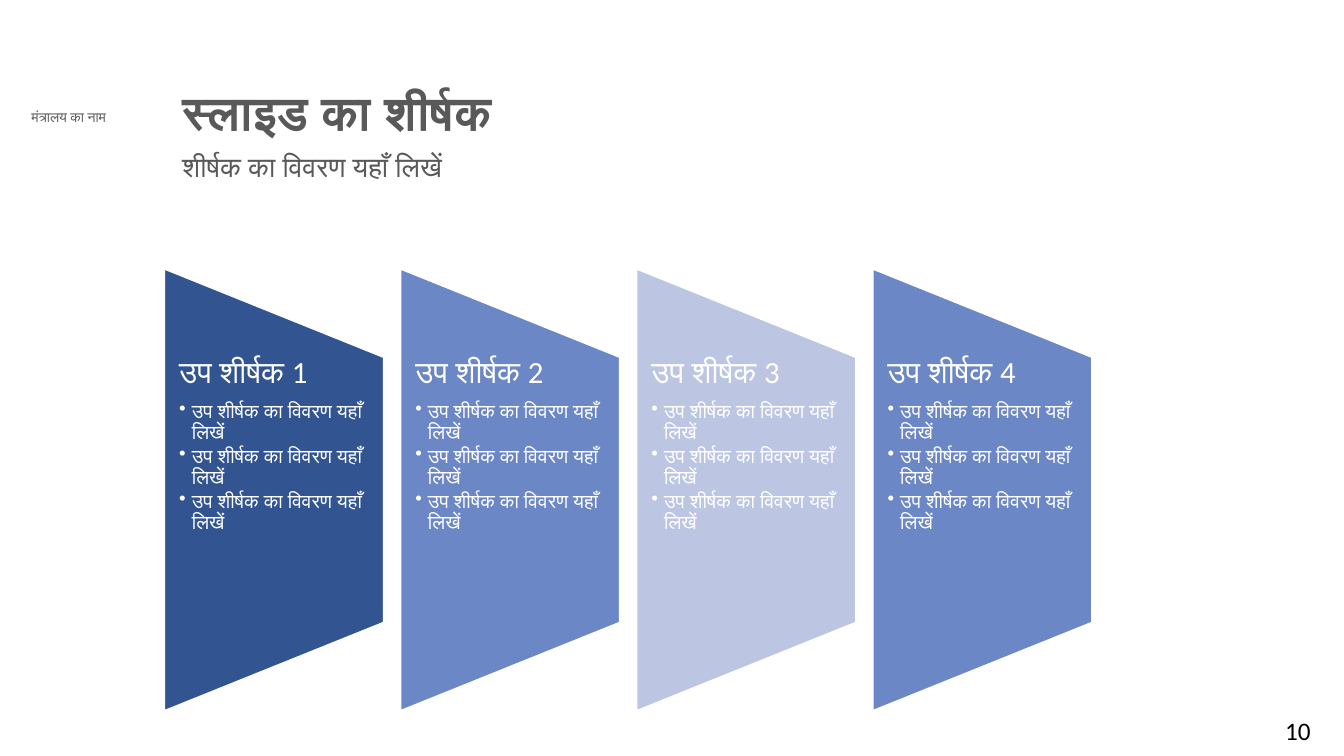
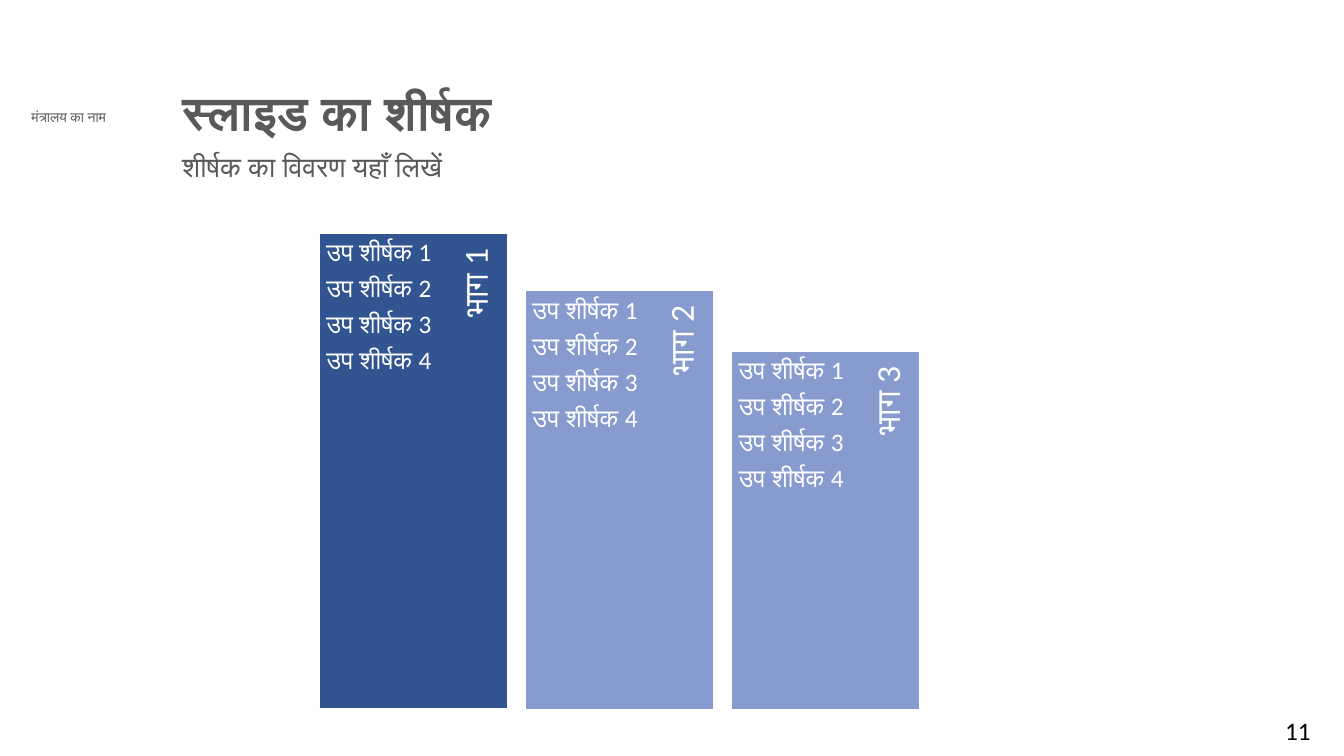
from dataclasses import dataclass

from lxml.etree import SubElement
from pptx import Presentation
from pptx.dml.color import RGBColor
from pptx.enum.shapes import MSO_SHAPE
from pptx.enum.text import MSO_ANCHOR, MSO_AUTO_SIZE, PP_ALIGN
from pptx.oxml.ns import qn
from pptx.util import Pt

WHITE = RGBColor(0xFF, 0xFF, 0xFF)
BLACK = RGBColor(0x00, 0x00, 0x00)
GREY = RGBColor(0x59, 0x59, 0x59)
NAVY = RGBColor(0x32, 0x54, 0x91)
BLUE = RGBColor(0x6C, 0x87, 0xC5)
SOFT_BLUE = RGBColor(0x87, 0x9B, 0xCE)
PALE_BLUE = RGBColor(0xBC, 0xC6, 0xE2)

BODY_FONT = "Calibri"
MINISTRY_FONT = "Lato"
TITLE_ONLY = 5
BULLET_INDENT = 9


@dataclass
class Box:
    """A rectangle in points."""

    left: float
    top: float
    width: float
    height: float

    def turned(self):
        """Return the box that covers this one after a quarter turn."""
        shift = (self.width - self.height) / 2
        return Box(self.left + shift, self.top - shift, self.height, self.width)

    def lengths(self):
        """Return left, top, width and height as lengths."""
        return [Pt(value) for value in (self.left, self.top, self.width, self.height)]


PAGE = Box(0, 0, 960, 540)
MINISTRY_BOX = Box(2.2, 74.2, 93.6, 19.4)
TITLE_BOX = Box(123.1, 60.5, 692, 39.6)
SUBTITLE_BOX = Box(123.1, 105.8, 692, 45.4)
NUMBER_BOX = Box(894.2, 507.6, 66, 32.4)
PANELS_BOX = Box(117.2, 191.8, 663, 316.2)
COLUMNS_BOX = Box(228.2, 166.4, 429, 340.2)


def write(frame, text, size=18, color=WHITE, font=BODY_FONT, bold=False,
          align=PP_ALIGN.LEFT, spacing=0.9, after=0.0, bullet=False):
    """Add one formatted paragraph; after is a share of the text size."""
    para = frame.paragraphs[0]
    if para.runs:
        para = frame.add_paragraph()
    if bullet:
        properties = para._p.get_or_add_pPr()
        properties.set("marL", str(Pt(BULLET_INDENT)))
        properties.set("indent", str(-Pt(BULLET_INDENT)))
        SubElement(properties, qn("a:buChar"), char="•")
    para.alignment = align
    para.line_spacing = spacing
    para.space_before = Pt(0)
    para.space_after = Pt(round(size * after, 2))
    span = para.add_run()
    span.text = text
    span.font.size = Pt(size)
    span.font.name = font
    span.font.bold = bold
    span.font.color.rgb = color


def set_frame(frame, insets=(7.2, 3.6, 7.2, 3.6), anchor=MSO_ANCHOR.TOP):
    """Give a text frame its insets, anchor and wrapping."""
    frame.word_wrap = True
    frame.auto_size = MSO_AUTO_SIZE.NONE
    frame.vertical_anchor = anchor
    (frame.margin_left, frame.margin_top,
     frame.margin_right, frame.margin_bottom) = [Pt(inset) for inset in insets]
    return frame


def add_frame(page, box, rotation=0, **settings):
    """Add a text box and return its frame."""
    text_box = page.shapes.add_textbox(*box.lengths())
    text_box.rotation = rotation
    return set_frame(text_box.text_frame, **settings)


def add_block(page, preset, box, fill, line_width, rotation=0):
    """Add a filled shape with a white outline."""
    block = page.shapes.add_shape(preset, *box.lengths())
    block.rotation = rotation
    block.shadow.inherit = False
    block.fill.solid()
    block.fill.fore_color.rgb = fill
    block.line.color.rgb = WHITE
    block.line.width = Pt(line_width)


def add_page(deck, number):
    """Add a slide with ministry name, title, subtitle and page number."""
    page = deck.slides.add_slide(deck.slide_layouts[TITLE_ONLY])
    write(add_frame(page, MINISTRY_BOX), "मंत्रालय का नाम", size=10, color=GREY,
          font=MINISTRY_FONT, align=PP_ALIGN.CENTER, spacing=1.0)
    title = page.shapes.title
    title.left, title.top, title.width, title.height = TITLE_BOX.lengths()
    write(set_frame(title.text_frame), "स्लाइड का शीर्षक", size=34, color=GREY, bold=True)
    write(add_frame(page, SUBTITLE_BOX), "शीर्षक का विवरण यहाँ लिखें", size=20, color=GREY)
    write(add_frame(page, NUMBER_BOX), str(number), color=BLACK,
          align=PP_ALIGN.CENTER, spacing=1.0)
    return page


def add_panel(page, box, number, fill):
    """Draw one sideways trapezoid with a heading and three bullets."""
    add_block(page, MSO_SHAPE.FLOWCHART_MANUAL_OPERATION, box.turned(), fill, 1.5, rotation=270)
    text_box = Box(box.left, box.top + box.height / 5, box.width, box.height * 0.6)
    frame = add_frame(page, text_box, insets=(10.8, 0, 10.8, 0))
    write(frame, f"उप शीर्षक {number}", size=22, after=0.35)
    for _ in range(3):
        write(frame, "उप शीर्षक का विवरण यहाँ लिखें", size=14, after=0.15, bullet=True)


def add_panels(page, box):
    """Spread four panels across the box."""
    fills = (NAVY, BLUE, PALE_BLUE, BLUE)
    width = 157
    pitch = (box.width - width) / (len(fills) - 1)
    for index, fill in enumerate(fills):
        panel_box = Box(box.left + index * pitch, box.top, width, box.height)
        add_panel(page, panel_box, index + 1, fill)


def add_column(page, box, number, fill):
    """Draw one column with a list and an upright label."""
    add_block(page, MSO_SHAPE.RECTANGLE, box, fill, 1)
    label_box = Box(box.left + 96, box.top, 35.2, box.height * 0.9)
    label = add_frame(page, label_box.turned(), rotation=270,
                      insets=(7.2, 0, 10.8, 2.2), anchor=MSO_ANCHOR.MIDDLE)
    write(label, f"भाग {number}", size=24, align=PP_ALIGN.RIGHT, after=0.35)
    list_box = Box(box.left, box.top, 95.8, box.height)
    items = add_frame(page, list_box, insets=(5, 5, 5, 5))
    for item in range(1, 5):
        write(items, f"उप शीर्षक {item}", after=0.35)


def add_columns(page, box):
    """Stand three shrinking columns on the bottom of the box."""
    columns = ((0, NAVY), (41, SOFT_BLUE), (84.2, SOFT_BLUE))
    width = 134.6
    pitch = (box.width - width) / (len(columns) - 1)
    for index, (drop, fill) in enumerate(columns):
        column_box = Box(box.left + index * pitch, box.top + drop, width, box.height - drop)
        add_column(page, column_box, index + 1, fill)


def main():
    """Build and save the deck."""
    deck = Presentation()
    deck.slide_width, deck.slide_height = Pt(PAGE.width), Pt(PAGE.height)
    add_panels(add_page(deck, 10), PANELS_BOX)
    add_columns(add_page(deck, 11), COLUMNS_BOX)
    deck.save("out.pptx")


if __name__ == "__main__":
    main()
